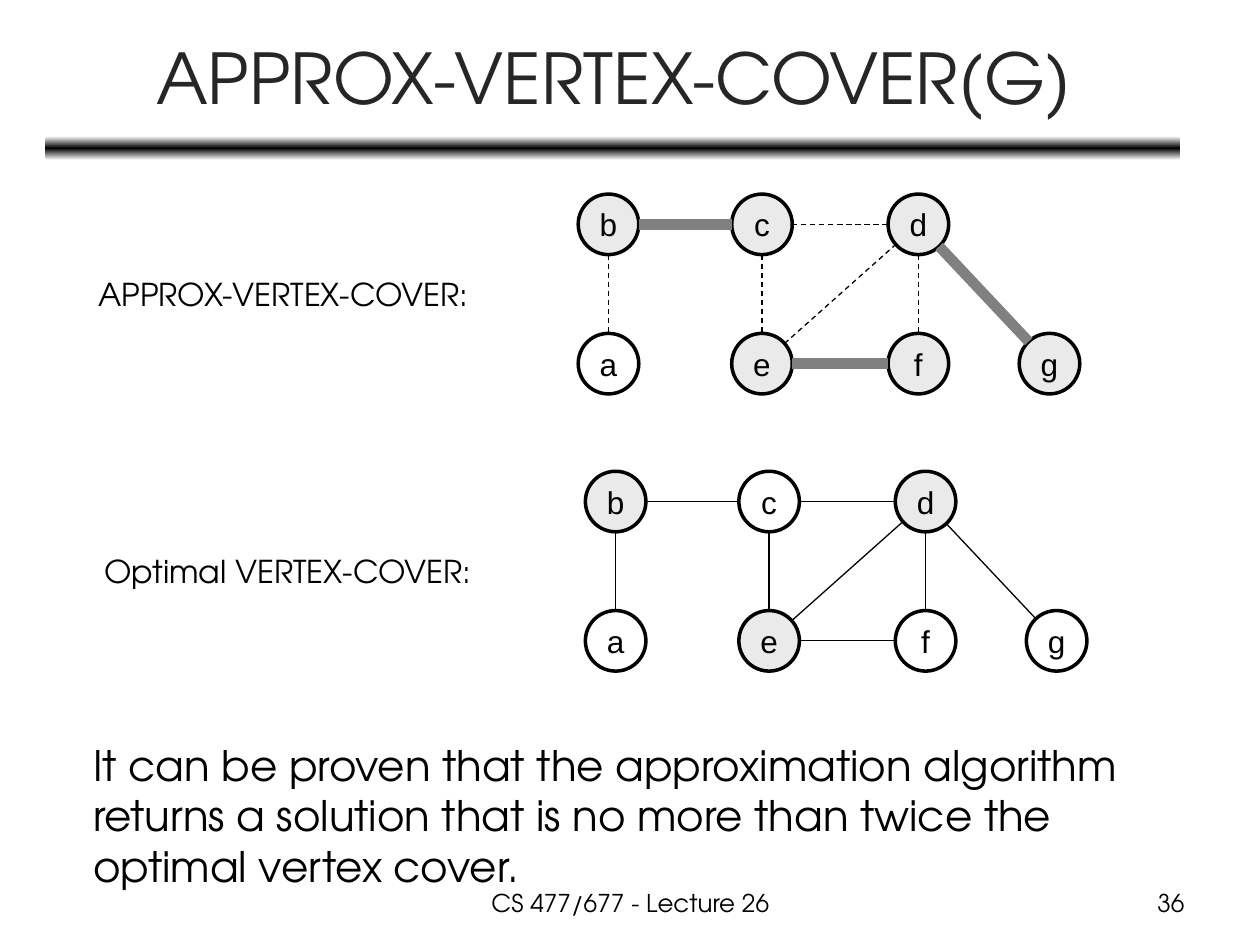
from copy import deepcopy
from dataclasses import dataclass
from math import hypot

from pptx import Presentation
from pptx import util as u
from pptx.dml.color import RGBColor
from pptx.enum import dml, shapes, text
from pptx.oxml import ns, xmlchemy

BLACK = RGBColor(0x00, 0x00, 0x00)
CHARCOAL = RGBColor(0x26, 0x26, 0x26)
GRAY = RGBColor(0x80, 0x80, 0x80)
LIGHT_GRAY = RGBColor(0xEA, 0xEA, 0xEA)
WHITE = RGBColor(0xFF, 0xFF, 0xFF)

TITLE_FONT = "TeX Gyre Adventor"
NODE_FONT = "Arial"
NODE_SIZE = 34.6
ROW_STEP = 79.6

# Node corners, relative to the top left of a graph
NODES = {
    "b": (0, 0), "c": (87.7, 0), "d": (177.1, 0),
    "a": (0, ROW_STEP), "e": (87.7, ROW_STEP),
    "f": (177.1, ROW_STEP), "g": (252, ROW_STEP),
}
EDGES = ("bc", "cd", "ba", "ce", "df", "ef", "ed", "dg")


@dataclass
class Graph:
    left: float
    top: float
    cover: str
    matching: tuple[str, ...] = ()
    dashed: bool = False


@dataclass
class Caption:
    words: str
    left: float
    top: float
    width: float
    height: float
    size: float
    align: text.PP_ALIGN = text.PP_ALIGN.LEFT
    color: RGBColor = BLACK
    wrap: bool = True
    anchor: text.MSO_ANCHOR = text.MSO_ANCHOR.TOP


GRAPHS = (
    Graph(330.4, 110.9, "bcdefg", ("bc", "ef", "dg"), dashed=True),
    Graph(334.5, 269.3, "bde"),
)
CENTER, RIGHT = text.PP_ALIGN.CENTER, text.PP_ALIGN.RIGHT
CAPTIONS = (
    Caption("APPROX-VERTEX-COVER(G)", 26.6, 7.9, 648, 71.3, 40, CENTER, CHARCOAL,
            anchor=text.MSO_ANCHOR.MIDDLE),
    Caption("APPROX-VERTEX-COVER:", 49, 153.4, 230.4, 28.8, 18, wrap=False),
    Caption("Optimal VERTEX-COVER:", 52.6, 311.8, 228.2, 28.8, 18, wrap=False),
    Caption("It can be proven that the approximation algorithm returns a solution "
            "that is no more than twice the optimal vertex cover.",
            46.1, 419, 618.5, 94.3, 24),
    Caption("CS 477/677 - Lecture 26", 246.2, 504, 228.2, 25.2, 14, CENTER),
    Caption("36", 516.2, 504, 167.8, 25.2, 14, RIGHT),
)


def write(shape, words: str, font: str, size: float, color: RGBColor, align) -> None:
    shape.text_frame.text = words
    para = shape.text_frame.paragraphs[0]
    para.alignment = align
    span = para.runs[0]
    span.font.name = font
    span.font.size = u.Pt(size)
    span.font.color.rgb = color


def draw_caption(page, caption: Caption) -> None:
    box = page.shapes.add_textbox(u.Pt(caption.left), u.Pt(caption.top),
                                  u.Pt(caption.width), u.Pt(caption.height))
    write(box, caption.words, TITLE_FONT, caption.size, caption.color, caption.align)
    box.text_frame.word_wrap = caption.wrap
    box.text_frame.vertical_anchor = caption.anchor


def draw_rule(page) -> None:
    """Draw the bar under the title, fading from black to white at both edges."""
    bar = page.shapes.add_shape(shapes.MSO_SHAPE.ROUNDED_RECTANGLE,
                                u.Pt(25.9), u.Pt(77.8), u.Pt(648.7), u.Pt(13.7))
    bar.shadow.inherit = False
    bar.line.fill.background()
    bar.fill.gradient()
    bar.fill.gradient_angle = 90
    stops = bar.element.spPr.find(ns.qn("a:gradFill")).find(ns.qn("a:gsLst"))
    stops.append(deepcopy(stops[0]))
    colors = (WHITE, BLACK, WHITE)
    for stop, position, color in zip(bar.fill.gradient_stops, (0, 0.5, 1), colors):
        stop.position = position
        stop.color.rgb = color


def draw_node(page, graph: Graph, name: str) -> None:
    x, y = NODES[name]
    node = page.shapes.add_shape(shapes.MSO_SHAPE.OVAL, u.Pt(graph.left + x),
                                 u.Pt(graph.top + y), u.Pt(NODE_SIZE), u.Pt(NODE_SIZE))
    node.shadow.inherit = False
    node.fill.solid()
    node.fill.fore_color.rgb = LIGHT_GRAY if name in graph.cover else WHITE
    node.line.color.rgb = BLACK
    node.line.width = u.Pt(2)
    write(node, name, NODE_FONT, 18, BLACK, CENTER)
    node.text_frame.word_wrap = False
    node.text_frame.vertical_anchor = text.MSO_ANCHOR.MIDDLE


def draw_edge(page, graph: Graph, edge: str) -> None:
    """Join two nodes from rim to rim along the line between their centres."""
    radius = NODE_SIZE / 2
    (x1, y1), (x2, y2) = (NODES[name] for name in edge)
    distance = hypot(x2 - x1, y2 - y1)
    dx, dy = (x2 - x1) * radius / distance, (y2 - y1) * radius / distance
    left, top = graph.left + radius, graph.top + radius
    line = page.shapes.add_connector(
        shapes.MSO_CONNECTOR.STRAIGHT,
        u.Pt(left + x1 + dx), u.Pt(top + y1 + dy),
        u.Pt(left + x2 - dx), u.Pt(top + y2 - dy))
    line.element.spPr.append(xmlchemy.OxmlElement("a:effectLst"))
    matched = edge in graph.matching
    line.line.color.rgb = GRAY if matched else BLACK
    line.line.width = u.Pt(6 if matched else 0.75)
    if graph.dashed and not matched:
        line.line.dash_style = dml.MSO_LINE.DASH


def main() -> None:
    deck = Presentation()
    deck.slide_width, deck.slide_height = u.Pt(720), u.Pt(540)
    page = deck.slides.add_slide(deck.slide_layouts[6])
    draw_rule(page)
    for graph in GRAPHS:
        for name in NODES:
            draw_node(page, graph, name)
        for edge in EDGES:
            draw_edge(page, graph, edge)
    for caption in CAPTIONS:
        draw_caption(page, caption)
    deck.save("out.pptx")


if __name__ == "__main__":
    main()
